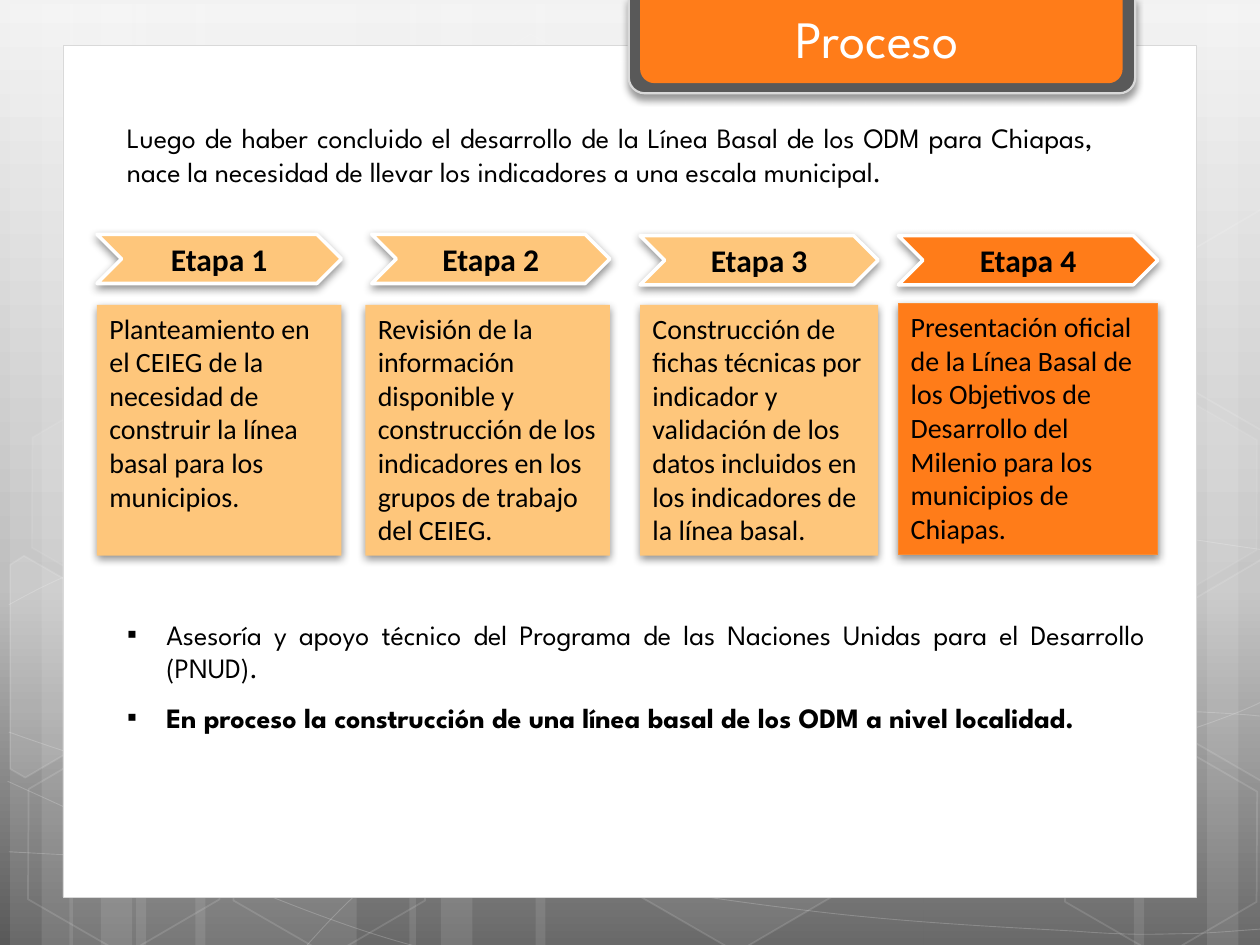
from dataclasses import dataclass
from math import cos, radians, sin
from lxml.etree import SubElement
from pptx import Presentation
from pptx.dml.color import RGBColor
from pptx.enum.shapes import MSO_SHAPE
from pptx.enum.text import MSO_ANCHOR, MSO_AUTO_SIZE, PP_ALIGN
from pptx.oxml.ns import qn
from pptx.util import Inches, Pt


@dataclass(frozen=True)
class Theme:
    white: str = "FFFFFF"
    black: str = "000000"
    orange: str = "FF7C19"
    orange_edge: str = "FA8C32"
    peach: str = "FEC67B"
    tab: str = "595959"
    edge: str = "D9D9D9"
    backdrop: tuple = ((0, "F2F2F2"), (62, "BFBFBF"), (100, "595959"))
    heading_font: str = "League Spartan"
    stage_font: str = "Calibri"
    title_size: int = 30
    stage_size: int = 18
    text_size: int = 16


THEME = Theme()
TILT = 30
BANDS = [(1.08, 1.75), (0.08, 0.5), (0.33, 0.83), (1.55, 1.75), (0.55, 0.5), (0.8, 0.83),
         (7.33, 1.75), (9.58, 0.5), (9, 0.83), (4.25, 3.08), (3.25, 0.5), (3.5, 0.83)]
WAVES = [
    [(0.07, 6.76), (0.61, 6.79), (1.15, 6.82), (1.9, 6.81), (2.65, 6.8), (3.58, 6.78), (4.58, 6.68),
     (5.58, 6.58), (7, 6.39), (7.92, 6.2), (8.83, 6.01), (9.77, 5.71), (10.07, 5.54)],
    [(0.07, 4.8), (0.36, 4.64), (0.65, 4.49), (1.21, 4.34), (1.78, 4.19), (2.59, 3.97), (3.47, 3.9),
     (4.36, 3.83), (5.44, 3.82), (6.54, 3.9), (7.64, 3.98), (9.47, 4.29), (10.07, 4.37)],
    [(0.06, 6.2), (1.27, 6.75), (2.47, 7.3), (3.34, 7.52)],
    [(0.07, 5.81), (0.38, 5.92), (0.7, 6.03), (1.28, 6.19), (1.86, 6.34), (2.73, 6.59), (3.57, 6.76),
     (4.4, 6.93), (5.45, 7.11), (6.28, 7.21), (7.11, 7.32), (8, 7.36), (8.53, 7.39), (9.05, 7.43),
     (9.19, 7.41), (9.45, 7.41), (9.71, 7.4), (9.89, 7.38), (10.07, 7.37)],
    [(2.42, 7.52), (2.6, 7.32), (2.78, 7.12), (3.02, 6.94), (3.26, 6.76), (3.6, 6.56), (3.88, 6.42),
     (4.16, 6.28), (4.33, 6.22), (4.7, 6.12), (5.06, 6.02), (5.73, 5.88), (6.08, 5.81), (6.44, 5.74),
     (6.49, 5.74), (6.8, 5.72), (7.11, 5.69), (7.6, 5.66), (7.94, 5.65), (8.29, 5.64), (8.86, 5.65),
     (8.86, 5.65), (8.86, 5.65), (9.53, 5.65), (9.53, 5.65), (9.71, 5.66), (9.88, 5.67), (9.97, 5.68),
     (10.06, 5.69), (10.03, 5.68), (10.06, 5.69)]]
HEXAGONS = [(3.34, 0.39, 4, 8), (4.97, 5.92, 6, 12), (0.11, 5.94, 0, 12), (0.14, 3.15, 7, 8),
            (1.74, 5.95, 0, 12), (7.53, 4.56, 10, 12), (8.34, 5.96, 0, 12), (8.34, 3.17, 7, 8)]
CUT_HEXAGONS = [
    ([(0.08, 4.48), (0.19, 4.41), (0.96, 4.85), (0.95, 5.73), (0.2, 6.17), (0.08, 6.1)], (0.36, 5.38), 10),
    ([(9.26, 4.88), (10.01, 4.44), (10.09, 4.49), (10.09, 6.16), (10.02, 6.2), (9.26, 5.76)], (9.85, 5.23), 4),
    ([(9.26, 2.1), (10.01, 1.66), (10.1, 1.71), (10.09, 3.38), (10.02, 3.42), (9.26, 2.98)], (9.85, 2.44), 0)]
STAGES = [
    ((0.77, 1.86, 1.94, 0.39), (0.77, 2.42, 1.94, 1.99), THEME.peach, None,
     "Planteamiento en el CEIEG de la necesidad de construir la línea basal para los municipios."),
    ((2.95, 1.86, 1.89, 0.39), (2.9, 2.42, 1.94, 1.99), THEME.peach, None,
     "Revisión de la información disponible y construcción de los indicadores en los grupos de trabajo del CEIEG."),
    ((5.08, 1.87, 1.89, 0.39), (5.08, 2.42, 1.89, 1.99), THEME.peach, None, "Construcción de fichas técnicas "
     "por indicador y validación de los datos incluidos en los indicadores de la línea basal."),
    ((7.13, 1.87, 2.06, 0.39), (7.13, 2.41, 2.06, 1.99), THEME.orange, THEME.orange_edge, "Presentación oficial "
     "de la Línea Basal de los Objetivos de Desarrollo del Milenio para los municipios de Chiapas.")]
INTRO = ("Luego de haber concluido el desarrollo de la Línea Basal de los ODM para Chiapas, "
         "nace la necesidad de llevar los indicadores a una escala municipal.")
NOTES = ["Asesoría y apoyo técnico del Programa de las Naciones Unidas para el Desarrollo (PNUD).",
         "En proceso la construcción de una línea basal de los ODM a nivel localidad."]


def set_color(fill, color, alpha, holder):
    fill.solid()
    fill.fore_color.rgb = RGBColor.from_string(color)
    if alpha < 100:
        SubElement(holder.find(qn("a:solidFill"))[0], qn("a:alpha"), val=str(alpha * 1000))


def paint(shape, fill=None, fill_alpha=100, line=None, weight=1, line_alpha=100, shadow=None):
    shape.shadow.inherit = False
    properties = shape.element.spPr
    shape.fill.background()
    shape.line.fill.background()
    if fill and fill_alpha:
        set_color(shape.fill, fill, fill_alpha, properties)
    if line:
        shape.line.width = Pt(weight)
        set_color(shape.line.fill, line, line_alpha, properties.find(qn("a:ln")))
    if shadow:
        alpha, blur, distance = shadow
        cast = SubElement(properties.find(qn("a:effectLst")), qn("a:outerShdw"), blurRad=str(Pt(blur)),
                          dist=str(Pt(distance)), dir="5400000", algn="ctr", rotWithShape="0")
        SubElement(SubElement(cast, qn("a:srgbClr"), val=THEME.black), qn("a:alpha"), val=str(alpha * 1000))
    return shape


def add_preset(slide, preset, box, **style):
    return paint(slide.shapes.add_shape(preset, *map(Inches, box)), **style)


def add_outline(slide, points, close, **style):
    corners = [(Inches(x), Inches(y)) for x, y in points]
    builder = slide.shapes.build_freeform(*corners[0])
    builder.add_line_segments(corners[1:], close=close)
    return paint(builder.convert_to_shape(), **style)


def bend(wave):
    lines = list(wave.element.iter(qn("a:lnTo")))
    for start in range(0, len(lines), 3):
        curve = SubElement(lines[start].getparent(), qn("a:cubicBezTo"))
        for line in lines[start:start + 3]:
            curve.append(line[0])
            line.getparent().remove(line)


def turn_back(point, center):
    angle, x, y = radians(TILT), point[0] - center[0], point[1] - center[1]
    return center[0] + x * cos(angle) + y * sin(angle), center[1] - x * sin(angle) + y * cos(angle)


def format_text(paragraph, font, size, color=THEME.black, bold=False, align=PP_ALIGN.LEFT):
    paragraph.alignment = align
    for run in paragraph.runs:
        run.font.name, run.font.size, run.font.bold = font, Pt(size), bold
        run.font.color.rgb = RGBColor.from_string(color)


def place_on_top(slide, placeholder, box, text):
    placeholder.left, placeholder.top, placeholder.width, placeholder.height = map(Inches, box)
    slide.shapes.element.append(placeholder.element)
    frame = placeholder.text_frame
    frame.text = text
    frame.auto_size, frame.vertical_anchor = MSO_AUTO_SIZE.NONE, MSO_ANCHOR.TOP
    return frame.paragraphs


def add_backdrop(slide, height):
    slide.background.fill.gradient()
    slide.background.fill.gradient_angle = 270
    stops = slide.element.find(".//" + qn("a:gsLst"))
    stops[:] = []
    for position, color in THEME.backdrop:
        SubElement(SubElement(stops, qn("a:gs"), pos=str(position * 1000)), qn("a:srgbClr"), val=color)
    for left, width in BANDS:
        add_preset(slide, MSO_SHAPE.RECTANGLE, (left, 0.03, width, height), fill=THEME.white, fill_alpha=10)
    for controls in WAVES:
        bend(add_outline(slide, controls, False, line=THEME.white, weight=0.5, line_alpha=20))
    for left, top, fill_alpha, line_alpha in HEXAGONS:
        hexagon = add_preset(slide, MSO_SHAPE.HEXAGON, (left, top, 1.75, 1.52), fill=THEME.white,
                             fill_alpha=fill_alpha, line=THEME.white, line_alpha=line_alpha)
        hexagon.adjustments[0] = 0.285
        hexagon.rotation = TILT
    for corners, center, fill_alpha in CUT_HEXAGONS:
        cut = add_outline(slide, [turn_back(corner, center) for corner in corners], True, fill=THEME.white,
                          fill_alpha=fill_alpha, line=THEME.white, line_alpha=12)
        cut.rotation = TILT
    add_preset(slide, MSO_SHAPE.RECTANGLE, (0.5, 0.36, 9, 6.76), fill=THEME.white, line=THEME.edge, weight=0.5)


def add_title_tab(slide, box):
    left, top, width, height = box
    tab = add_preset(slide, MSO_SHAPE.ROUND_2_SAME_RECTANGLE, box, fill=THEME.tab, line=THEME.edge,
                     weight=1.25, shadow=(40, 4, 3))
    face = add_preset(slide, MSO_SHAPE.ROUND_2_SAME_RECTANGLE, (left + 0.09, top, width - 0.19, height - 0.08),
                      fill=THEME.orange)
    tab.rotation = face.rotation = 180
    heading = place_on_top(slide, slide.shapes.title, (left + 0.01, 0, width - 0.09, 0.71), "Proceso")[0]
    format_text(heading, THEME.heading_font, THEME.title_size, THEME.white, align=PP_ALIGN.CENTER)


def add_stage(slide, number, arrow_box, card_box, color, card_edge, description):
    shadow = (43, 5, 2)
    arrow = add_preset(slide, MSO_SHAPE.CHEVRON, arrow_box, fill=color, line=THEME.white, weight=2, shadow=shadow)
    arrow.text_frame.text = f"Etapa {number}"
    format_text(arrow.text_frame.paragraphs[0], THEME.stage_font, THEME.stage_size, bold=True, align=PP_ALIGN.CENTER)
    card = add_preset(slide, MSO_SHAPE.RECTANGLE, card_box, fill=color, line=card_edge, weight=0.75, shadow=shadow)
    card.text_frame.text = description
    card.text_frame.vertical_anchor = MSO_ANCHOR.TOP
    format_text(card.text_frame.paragraphs[0], THEME.stage_font, THEME.text_size)


def add_intro(slide, box):
    intro = slide.shapes.add_textbox(*map(Inches, box)).text_frame
    intro.word_wrap = True
    intro.text = INTRO
    format_text(intro.paragraphs[0], THEME.heading_font, THEME.text_size, align=PP_ALIGN.JUSTIFY)


def add_notes(slide, box):
    for index, note in enumerate(place_on_top(slide, slide.placeholders[1], box, "\n".join(NOTES))):
        indents = note._p.get_or_add_pPr()
        indents.set("marL", str(Inches(0.31)))
        indents.set("indent", str(-Inches(0.31)))
        SubElement(indents, qn("a:buFont"), typeface="Arial")
        SubElement(indents, qn("a:buChar"), char="▪")
        note.space_before = Pt(9 * index)
        format_text(note, THEME.heading_font, THEME.text_size, bold=index == 1, align=PP_ALIGN.JUSTIFY)


def main():
    deck = Presentation()
    deck.slide_width, deck.slide_height = Inches(10), Inches(7.5)
    slide = deck.slides.add_slide(deck.slide_layouts[1])
    add_backdrop(slide, 7.5)
    add_title_tab(slide, (4.99, -0.02, 4.02, 0.76))
    for number, stage in enumerate(STAGES, 1):
        add_stage(slide, number, *stage)
    add_intro(slide, (0.91, 0.91, 7.87, 0.91))
    add_notes(slide, (0.91, 4.85, 8.28, 1.3))
    deck.save("out.pptx")


if __name__ == "__main__":
    main()
